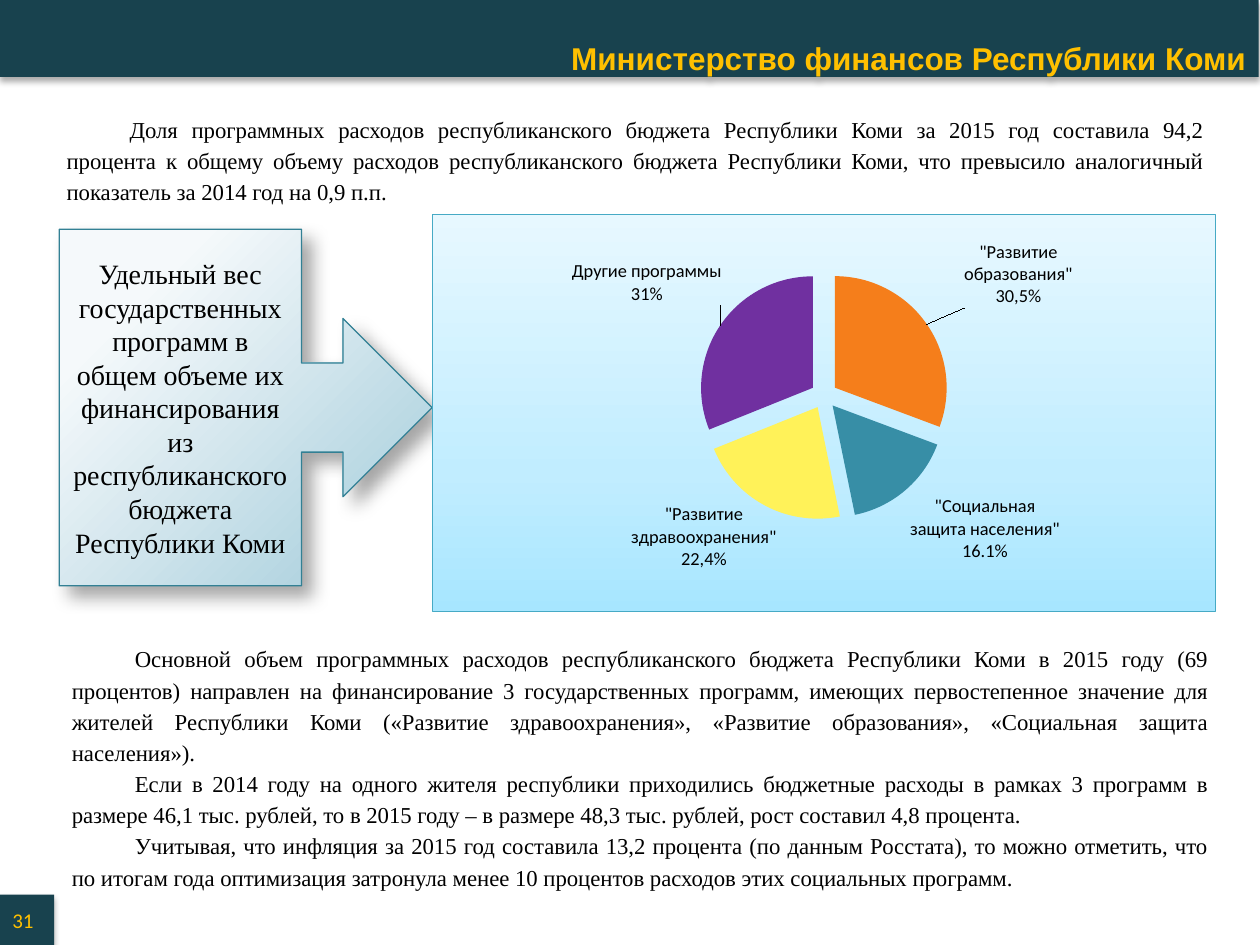
from dataclasses import dataclass

from lxml.etree import SubElement
from pptx import Presentation
from pptx.chart.data import CategoryChartData
from pptx.dml.color import RGBColor
from pptx.enum.chart import XL_CHART_TYPE, XL_LABEL_POSITION
from pptx.enum.shapes import MSO_SHAPE
from pptx.enum.text import MSO_ANCHOR, MSO_AUTO_SIZE, PP_ALIGN
from pptx.oxml import parse_xml
from pptx.oxml.ns import nsdecls, qn
from pptx.util import Inches, Pt


@dataclass(frozen=True)
class Theme:
    band: str = "18424E"
    accent: str = "FFC000"
    text: str = "000000"
    callout_line: str = "328094"
    callout_stops: tuple = ((20, "F5F9FB"), (100, "A0CAD9"))
    chart_line: str = "46AAC5"
    chart_stops: tuple = ((0, "A7E6FF"), (35, "C1EDFF"), (100, "E7F8FF"))
    slices: tuple = ("F57E1B", "378EA6", "FFF259", "7030A0")
    heading_font: str = "Arial"
    body_font: str = "Times New Roman"
    label_font: str = "Calibri"
    heading_size: float = 18
    callout_size: float = 16
    body_size: float = 13
    number_size: float = 12
    label_size: float = 10.5
    # opacity %, blur pt, distance pt, direction in degrees
    band_shadow: tuple = (32, 3.5, 2.2, 90)
    callout_shadow: tuple = (35, 10.2, 8, 45)


def write(frame, paragraphs, *, font, size, color, bold=False, align=PP_ALIGN.LEFT,
          anchor=MSO_ANCHOR.TOP, spacing=None, first_indent=0):
    frame.word_wrap = True
    frame.auto_size = MSO_AUTO_SIZE.NONE
    frame.vertical_anchor = anchor
    for index, text in enumerate(paragraphs):
        paragraph = frame.paragraphs[0] if index == 0 else frame.add_paragraph()
        properties = paragraph._p.get_or_add_pPr()
        properties.set("marL", "0")
        properties.set("indent", str(Inches(first_indent)))
        SubElement(properties, qn("a:buNone"))
        paragraph.alignment = align
        paragraph.space_before = Pt(0)
        if spacing:
            paragraph.line_spacing = spacing
        run = paragraph.add_run()
        run.text = text
        run.font.name, run.font.size, run.font.bold = font, Pt(size), bold
        run.font.color.rgb = RGBColor.from_string(color)


def gradient(stops, direction):
    marks = "".join(f'<a:gs pos="{share * 1000}"><a:srgbClr val="{color}"/></a:gs>'
                    for share, color in stops)
    return (f'<a:gradFill {nsdecls("a")} rotWithShape="1"><a:gsLst>{marks}</a:gsLst>'
            f'{direction}</a:gradFill>')


def cast_shadow(shape, opacity, blur, distance, angle):
    shape.shadow.inherit = False
    shape.element.spPr.find(qn("a:effectLst")).append(parse_xml(
        f'<a:outerShdw {nsdecls("a")} blurRad="{Pt(blur)}" dist="{Pt(distance)}" '
        f'dir="{angle * 60000}" algn="ctr" rotWithShape="0"><a:srgbClr val="000000">'
        f'<a:alpha val="{opacity * 1000}"/></a:srgbClr></a:outerShdw>'))


def manual_layout(x, y, size=None):
    """Chart layout: an offset, or a fixed inner plot area when a size is given."""
    fixed = size is not None
    parts = [("layoutTarget", "inner"), ("xMode", "edge"), ("yMode", "edge")] if fixed else []
    parts += [("x", x), ("y", y)]
    if fixed:
        parts += [("w", size[0]), ("h", size[1])]
    body = "".join(f'<c:{name} val="{value}"/>' for name, value in parts)
    return parse_xml(f'<c:layout {nsdecls("c")}><c:manualLayout>{body}</c:manualLayout></c:layout>')


class SlideBuilder:
    """Places elements on a grid of 100 columns by 75 rows."""

    def __init__(self, presentation, theme):
        self.theme = theme
        self.column = presentation.slide_width / 100
        self.row = presentation.slide_height / 75
        self.slide = presentation.slides.add_slide(presentation.slide_layouts[1])

    def cells(self, left, top, width, height):
        return (round(left * self.column), round(top * self.row),
                round(width * self.column), round(height * self.row))

    def move(self, shape, box):
        shape.left, shape.top, shape.width, shape.height = self.cells(*box)

    def paint_band(self, shape):
        shape.fill.solid()
        shape.fill.fore_color.rgb = RGBColor.from_string(self.theme.band)
        shape.line.fill.background()
        cast_shadow(shape, *self.theme.band_shadow)

    def title(self, text, box):
        shape = self.slide.shapes.title
        self.move(shape, box)
        self.paint_band(shape)
        write(shape.text_frame, [text], font=self.theme.heading_font,
              size=self.theme.heading_size, color=self.theme.accent, bold=True,
              align=PP_ALIGN.RIGHT, anchor=MSO_ANCHOR.BOTTOM)
        shape.text_frame.margin_bottom = 0

    def page_number(self, text, box):
        shape = self.slide.shapes.add_shape(MSO_SHAPE.RECTANGLE, *self.cells(*box))
        self.paint_band(shape)
        write(shape.text_frame, [text], font=self.theme.label_font,
              size=self.theme.number_size, color=self.theme.accent, anchor=MSO_ANCHOR.MIDDLE)

    def prose(self, frame, paragraphs):
        write(frame, paragraphs, font=self.theme.body_font, size=self.theme.body_size,
              color=self.theme.text, align=PP_ALIGN.JUSTIFY, spacing=1.14, first_indent=0.5)

    def intro(self, text, box):
        self.prose(self.slide.shapes.add_textbox(*self.cells(*box)).text_frame, [text])

    def body(self, paragraphs, box):
        shape = self.slide.placeholders[1]
        self.move(shape, box)
        self.prose(shape.text_frame, paragraphs)

    def callout(self, paragraphs, box):
        shape = self.slide.shapes.add_shape(MSO_SHAPE.RIGHT_ARROW_CALLOUT, *self.cells(*box))
        shape.line.color.rgb = RGBColor.from_string(self.theme.callout_line)
        shape.line.width = Pt(0.75)
        direction = ('<a:path path="circle"><a:fillToRect l="-15000" t="-15000" '
                     'r="115000" b="115000"/></a:path>')
        shape.element.spPr.find(qn("a:ln")).addprevious(
            parse_xml(gradient(self.theme.callout_stops, direction)))
        cast_shadow(shape, *self.theme.callout_shadow)
        write(shape.text_frame, paragraphs, font=self.theme.body_font,
              size=self.theme.callout_size, color=self.theme.text,
              align=PP_ALIGN.CENTER, anchor=MSO_ANCHOR.MIDDLE)

    def pie(self, shares, custom_labels, box):
        """Exploded pie; custom_labels maps a slice index to (value text, x shift, y shift)."""
        theme = self.theme
        data = CategoryChartData()
        data.categories = list(shares)
        data.add_series("Series 1", list(shares.values()))
        chart = self.slide.shapes.add_chart(
            XL_CHART_TYPE.PIE, *self.cells(*box), data).chart
        chart.has_title = chart.has_legend = False
        chart.font.name, chart.font.size = theme.label_font, Pt(theme.label_size)
        chart.font.color.rgb = RGBColor.from_string(theme.text)
        plot = chart.plots[0]
        plot.vary_by_categories = True
        series = plot.series[0]

        labels = series.data_labels
        labels.show_percentage = labels.show_category_name = True
        labels.show_value = False
        labels.number_format, labels.number_format_is_linked = "0.0%", False
        labels.position = XL_LABEL_POSITION.OUTSIDE_END
        separator = parse_xml(f'<c:separator {nsdecls("c")}>\n</c:separator>')
        series._element.find(qn("c:dLbls")).find(qn("c:showBubbleSize")).addnext(separator)

        for index, (name, color) in enumerate(zip(shares, theme.slices)):
            point = series.points[index]
            point.format.fill.solid()
            point.format.fill.fore_color.rgb = RGBColor.from_string(color)
            if index in custom_labels:
                value, shift_x, shift_y = custom_labels[index]
                label = point.data_label
                write(label.text_frame, [name, value], font=theme.label_font,
                      size=theme.label_size, color=theme.text, align=PP_ALIGN.CENTER)
                label.position = XL_LABEL_POSITION.OUTSIDE_END
                label._dLbl.find(qn("c:idx")).addnext(manual_layout(shift_x, shift_y))
        series._element.find(qn("c:dPt")).addprevious(
            parse_xml(f'<c:explosion {nsdecls("c")} val="12"/>'))

        plot_area = chart.element.find(".//" + qn("c:plotArea"))
        for layout in plot_area.findall(qn("c:layout")):
            plot_area.remove(layout)
        plot_area.insert(0, manual_layout(0.34, 0.14, (0.32, 0.63)))
        fill = gradient(theme.chart_stops, '<a:lin ang="16200000" scaled="1"/>')
        chart.element.find(qn("c:chart")).addnext(parse_xml(
            f'<c:spPr {nsdecls("c", "a")}>{fill}<a:ln w="{Pt(0.75)}"><a:solidFill>'
            f'<a:srgbClr val="{theme.chart_line}"/></a:solidFill></a:ln></c:spPr>'))


def main():
    presentation = Presentation()
    presentation.slide_width, presentation.slide_height = Inches(10), Inches(7.5)
    builder = SlideBuilder(presentation, Theme())
    builder.title("Министерство финансов Республики Коми", (0, -0.1, 99.9, 6.2))
    builder.callout(
        ["Удельный вес государственных программ в общем объеме их финансирования",
         "из республиканского бюджета Республики Коми"], (4.7, 18.2, 29.6, 28.3))
    builder.page_number("31", (0, 71, 4.3, 4))
    builder.intro(
        "Доля программных расходов республиканского бюджета Республики Коми за 2015 год "
        "составила 94,2 процента к общему объему расходов республиканского бюджета Республики "
        "Коми, что превысило аналогичный показатель за 2014 год на 0,9 п.п.",
        (4.3, 8.4, 92.1, 8.5))
    builder.pie(
        {'"Развитие образования"': 30.7, '"Социальная защита населения"': 16.1,
         '"Развитие здравоохранения"': 22.1, "Другие программы": 31.1},
        {0: ("30,5%", 0.04, -0.03), 2: ("22,4%", 0.02, -0.02), 3: ("31%", 0.01, -0.04)},
        (34.3, 17, 62.2, 31.6))
    builder.body(
        ["Основной объем программных расходов республиканского бюджета Республики Коми в 2015 "
         "году (69 процентов) направлен на финансирование 3 государственных программ, имеющих "
         "первостепенное значение для жителей Республики Коми («Развитие здравоохранения», "
         "«Развитие образования», «Социальная защита населения»).",
         "Если в 2014 году на одного жителя республики приходились бюджетные расходы в рамках "
         "3 программ в размере 46,1 тыс. рублей, то в 2015 году – в размере 48,3 тыс. рублей, "
         "рост составил 4,8 процента.",
         "Учитывая, что инфляция за 2015 год составила 13,2 процента (по данным Росстата), то "
         "можно отметить, что по итогам года оптимизация затронула менее 10 процентов расходов "
         "этих социальных программ."], (4.7, 50.4, 92.1, 21))
    presentation.save("out.pptx")


if __name__ == "__main__":
    main()
